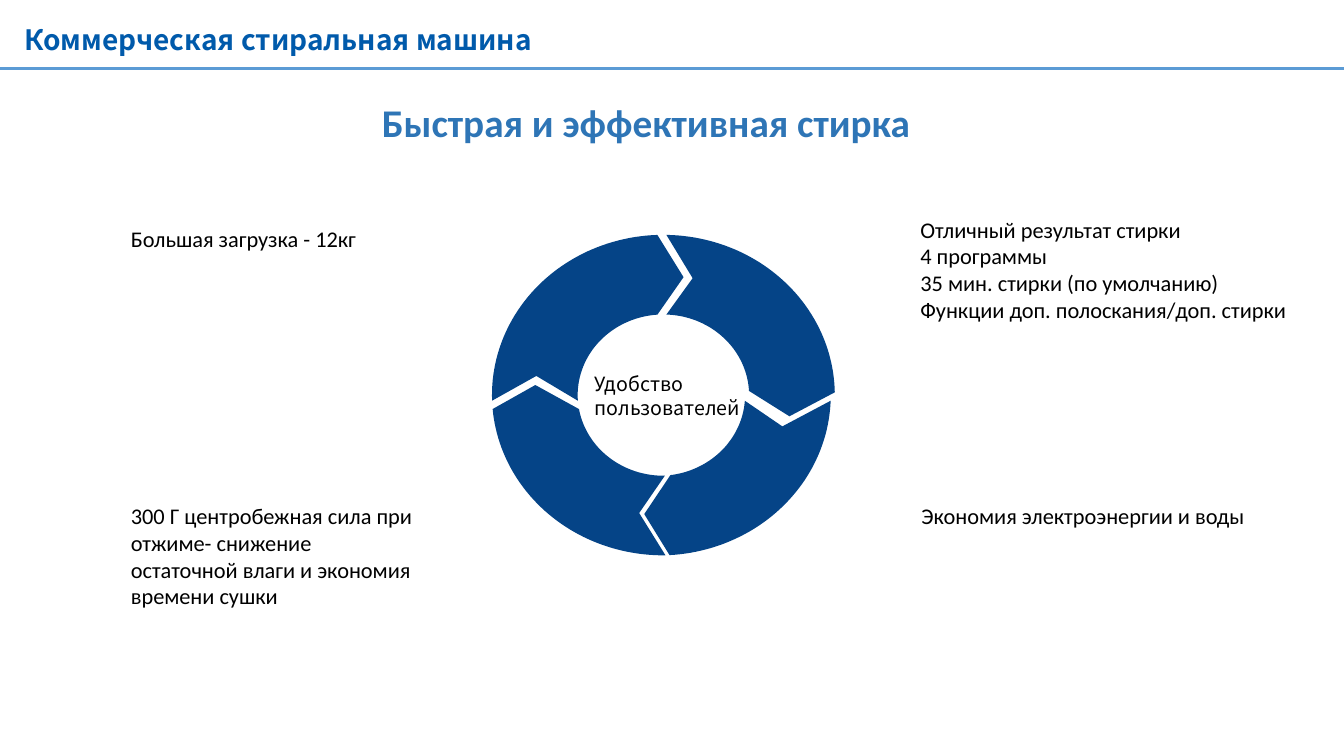
from dataclasses import dataclass
from math import cos, radians, sin

from lxml import etree
from pptx import Presentation
from pptx.dml.color import RGBColor
from pptx.enum.shapes import MSO_CONNECTOR
from pptx.enum.text import MSO_AUTO_SIZE
from pptx.oxml.ns import qn
from pptx.util import Inches, Pt

STRAIGHT = MSO_CONNECTOR.STRAIGHT
GROW = MSO_AUTO_SIZE.SHAPE_TO_FIT_TEXT


@dataclass(frozen=True)
class Theme:
    body_font: str = "Calibri"
    label_font: str = "Noto Sans CJK SC"
    black: RGBColor = RGBColor(0x00, 0x00, 0x00)
    header: RGBColor = RGBColor(0x00, 0x5A, 0xAB)
    heading: RGBColor = RGBColor(0x2E, 0x75, 0xB6)
    rule: RGBColor = RGBColor(0x5B, 0x9B, 0xD5)
    ring: RGBColor = RGBColor(0x05, 0x44, 0x87)
    header_size: int = 20
    heading_size: int = 28
    body_size: int = 16
    hub_size: int = 14


THEME = Theme()


@dataclass(frozen=True)
class Label:
    left: float
    top: float
    width: float
    height: float
    lines: tuple[str, ...]
    size: int = THEME.body_size
    font: str = THEME.body_font
    color: RGBColor = THEME.black
    bold: bool = False
    wrap: bool = True
    inset: tuple[float, float] = (0.1, 0.05)


@dataclass(frozen=True)
class Segment:
    """Ring arrow: arcs in clockwise degrees from the right, plus its two notch points."""
    outer: tuple[float, float]
    inner: tuple[float, float]
    start_notch: tuple[float, float]
    end_notch: tuple[float, float]
    center_x: float = 6.58


CENTER_Y = 3.92
OUTER_RADII = (1.7, 1.59)
INNER_RADII = (0.85, 0.8)
ARC_STEPS = 48

SEGMENTS = (
    Segment((-89, -1), (-88, -3), (6.87, 2.76), (7.83, 4.13)),
    Segment((178, 268), (176, 266), (5.32, 3.73), (6.78, 2.75)),
    Segment((89.3, 175), (89, 170), (6.34, 5.09), (5.31, 3.82)),
    Segment((2, 86.6), (4, 82.6), (7.76, 4.23), (6.39, 5.1), center_x=6.54),
)

LABELS = (
    Label(0.14, 0.17, 9.99, 0.44, ("Коммерческая стиральная машина",),
          THEME.header_size, THEME.label_font, THEME.header, bold=True),
    Label(3.69, 0.93, 5.5, 0.57, ("Быстрая и эффективная стирка",),
          THEME.heading_size, color=THEME.heading, bold=True, wrap=False),
    Label(1.2, 2.18, 2.66, 0.37, ("Большая загрузка - 12кг",)),
    Label(9.03, 2.09, 4.18, 1.18, (
        "Отличный результат стирки",
        "4 программы",
        "35 мин. стирки (по умолчанию)",
        "Функции доп. полоскания/доп. стирки")),
    Label(1.2, 4.93, 3.04, 1.18, (
        "300 Г центробежная сила при отжиме- снижение "
        "остаточной влаги и экономия времени сушки",)),
    Label(9.04, 4.93, 3.53, 0.37, ("Экономия электроэнергии и воды",)),
    Label(5.82, 3.65, 1.84, 0.55, ("Удобство пользователей",),
          THEME.hub_size, THEME.label_font, inset=(0.08, 0.04)),
)


def add_label(s, label: Label) -> None:
    box = s.shapes.add_textbox(Inches(label.left), Inches(label.top),
                               Inches(label.width), Inches(label.height))
    tf = box.text_frame
    tf.word_wrap = label.wrap
    tf.auto_size = GROW
    tf.margin_left = tf.margin_right = Inches(label.inset[0])
    tf.margin_top = tf.margin_bottom = Inches(label.inset[1])
    tf.text = "\n".join(label.lines)
    for p in tf.paragraphs:
        p.font.name = label.font
        p.font.size = Pt(label.size)
        p.font.bold = label.bold
        p.font.color.rgb = label.color


def arc(center_x: float, radii: tuple[float, float],
        start: float, end: float) -> list[tuple[float, float]]:
    angles = (radians(start + (end - start) * i / ARC_STEPS) for i in range(ARC_STEPS + 1))
    return [(center_x + radii[0] * cos(a), CENTER_Y + radii[1] * sin(a)) for a in angles]


def add_segment(group, seg: Segment) -> None:
    outer = arc(seg.center_x, OUTER_RADII, *seg.outer)
    inner = arc(seg.center_x, INNER_RADII, *seg.inner)
    outline = [*outer, seg.end_notch, *reversed(inner), seg.start_notch]
    points = [(Inches(x), Inches(y)) for x, y in outline]
    builder = group.shapes.build_freeform(*points[0])
    builder.add_line_segments(points[1:], close=True)
    sp = builder.convert_to_shape()
    sp.shadow.inherit = False
    sp.fill.solid()
    sp.fill.fore_color.rgb = THEME.ring
    sp.line.fill.background()


def add_header_rule(s, width: int) -> None:
    rule = s.shapes.add_connector(STRAIGHT, 0, Inches(0.68), width, Inches(0.68))
    rule.line.color.rgb = THEME.rule
    rule.line.width = Pt(2.25)
    etree.SubElement(rule._element.spPr, qn("a:effectLst"))


def main() -> None:
    prs = Presentation()
    prs.slide_width, prs.slide_height = Inches(13.33), Inches(7.5)
    s = prs.slides.add_slide(prs.slide_layouts[6])

    # Header rule
    add_header_rule(s, prs.slide_width)

    # Ring of four arrows
    ring = s.shapes.add_group_shape()
    for seg in SEGMENTS:
        add_segment(ring, seg)

    # Titles, benefits and hub text
    for label in LABELS:
        add_label(s, label)

    prs.save("out.pptx")


if __name__ == "__main__":
    main()
